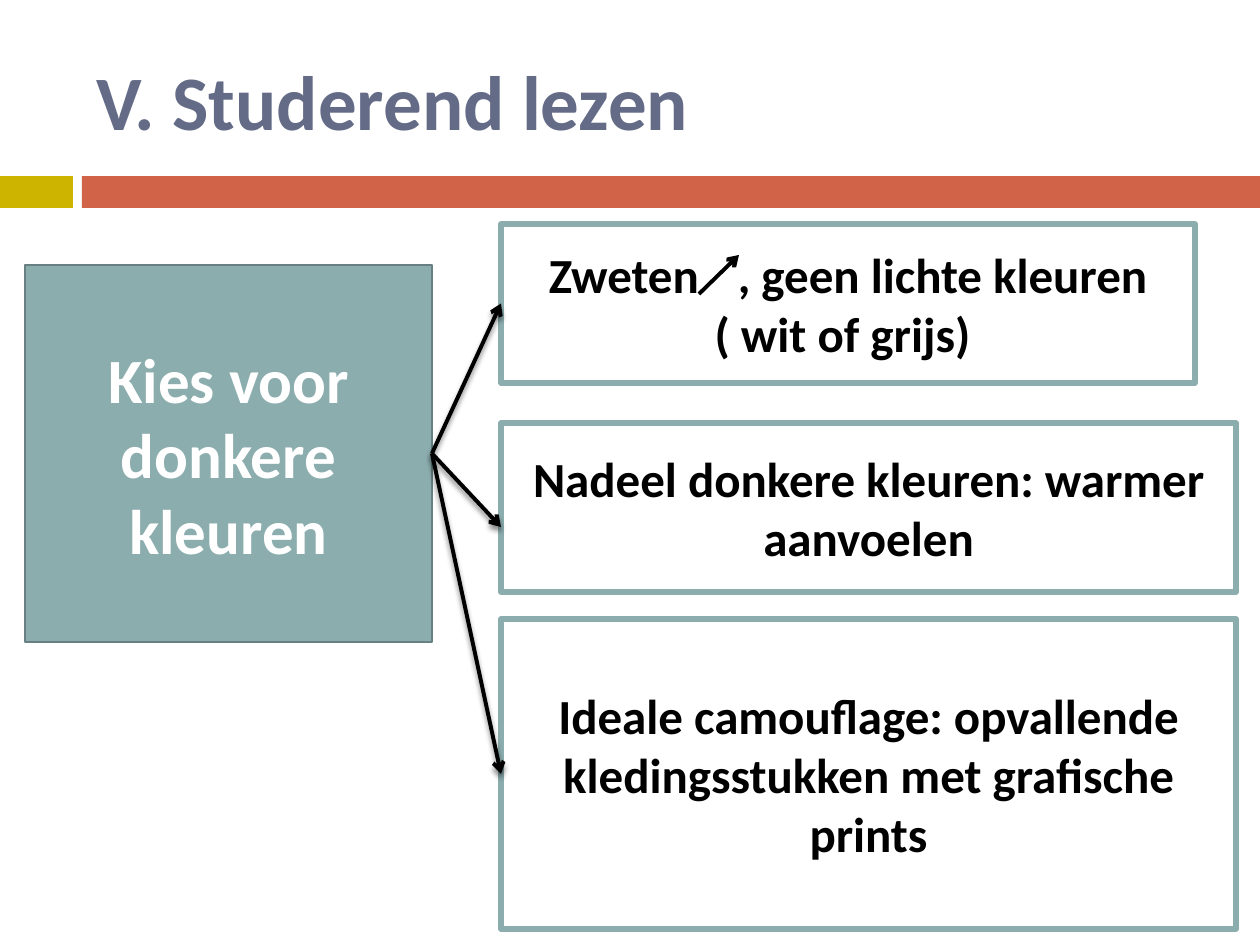
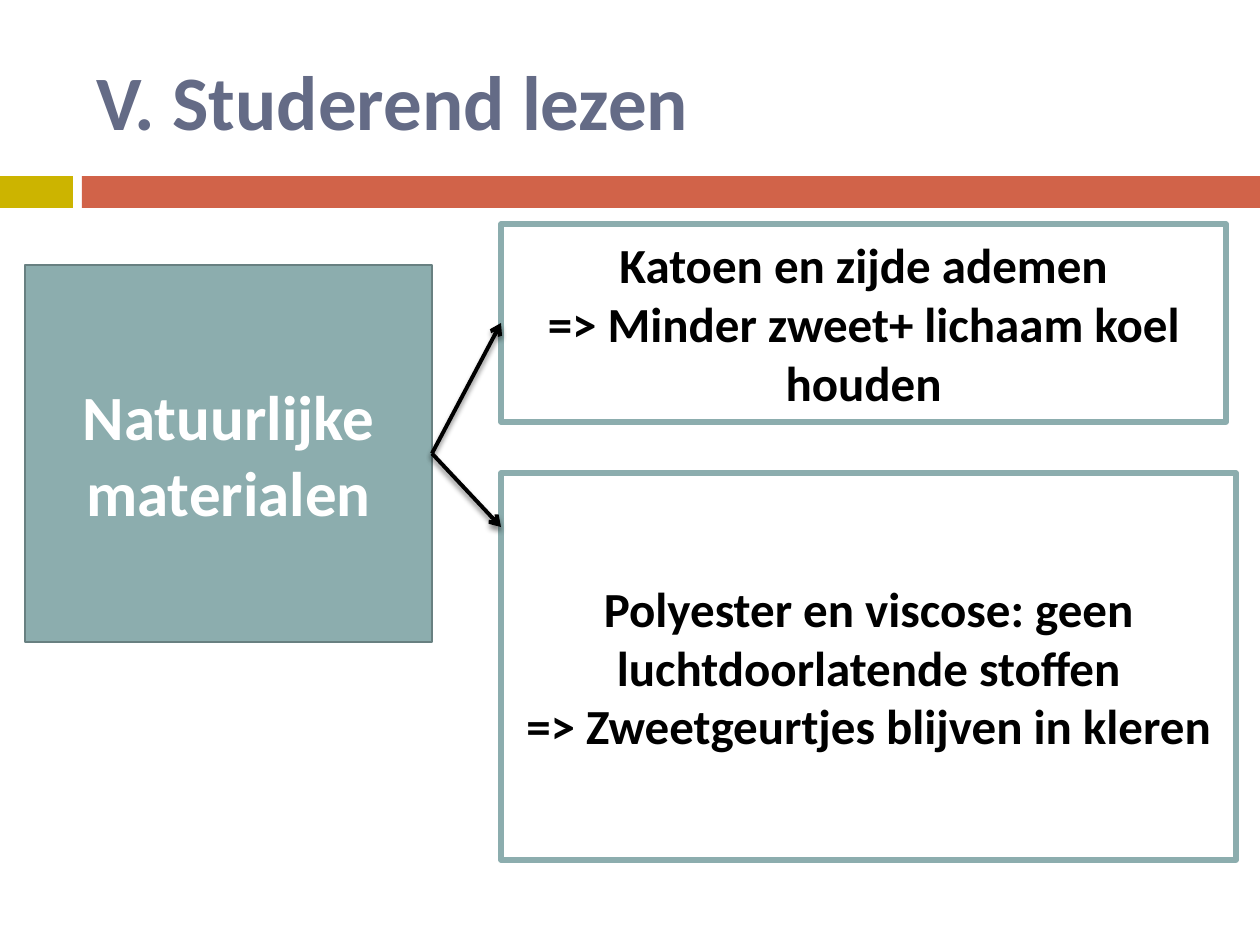
from dataclasses import dataclass

from lxml.etree import SubElement
from pptx import Presentation
from pptx.dml.color import RGBColor
from pptx.enum.shapes import MSO_CONNECTOR as Connector, MSO_SHAPE as Shape
from pptx.enum.text import MSO_ANCHOR as Anchor, PP_ALIGN as Align
from pptx.oxml.ns import qn
from pptx.util import Pt

HEADING = "V. Studerend lezen"

SLIDES = [
    {
        "topic": "Kies voor donkere kleuren",
        "points": [
            {"box": (224, 694, 159), "lines": ["Zweten\t, geen lichte kleuren ( wit of grijs) "]},
            {"box": (423, 735, 169), "lines": ["Nadeel donkere kleuren: warmer aanvoelen"],
             "arrow_y": 527},
            {"box": (619, 735, 310),
             "lines": ["Ideale camouflage: opvallende kledingsstukken met grafische prints"]},
        ],
        "rise": ((699, 294), (739, 255)),
    },
    {
        "topic": "Natuurlijke materialen",
        "points": [
            {"box": (224, 725, 198),
             "lines": ["Katoen en zijde ademen", "=> Minder zweet+ lichaam koel houden"]},
            {"box": (473, 735, 387),
             "lines": ["Polyester en viscose: geen luchtdoorlatende stoffen",
                       "=> Zweetgeurtjes blijven in kleren"],
             "arrow_y": 527},
        ],
    },
]


@dataclass(frozen=True)
class Theme:
    font: str = "Calibri"
    heading: str = "646B86"
    accent: str = "CCB400"
    band: str = "D16349"
    topic: str = "8CADAE"
    topic_edge: str = "688081"
    ink: str = "000000"
    paper: str = "FFFFFF"
    heading_size: int = 44
    topic_size: int = 36
    point_size: int = 28


THEME = Theme()
WIDTH, HEIGHT = 1260, 945
HEADING_BOX = (84, 32, 1124, 136)
BANDS = [((0, 176, 73, 32), THEME.accent), ((82, 176, WIDTH - 82, 32), THEME.band)]
TOPIC_BOX = (25, 265, 407, 377)
POINT_LEFT = 501
RIGHT_SIDE, LEFT_SIDE = 3, 1


def px(length):
    return round(length * 914400 / 126)


def rgb(code):
    return RGBColor.from_string(code)


def write(holder, lines, size, color, align=Align.CENTER):
    frame = holder.text_frame
    frame.word_wrap = True
    frame.vertical_anchor = Anchor.MIDDLE
    for index, line in enumerate(lines):
        paragraph = frame.add_paragraph() if index else frame.paragraphs[0]
        paragraph.alignment = align
        run = paragraph.add_run()
        run.text = line
        run.font.name = THEME.font
        run.font.size = Pt(size)
        run.font.bold = True
        run.font.color.rgb = rgb(color)


def add_box(slide, box, fill=None, edge=None, weight=0):
    rect = slide.shapes.add_shape(Shape.RECTANGLE, *map(px, box))
    rect.shadow.inherit = False
    if fill:
        rect.fill.solid()
        rect.fill.fore_color.rgb = rgb(fill)
    else:
        rect.fill.background()
    if edge:
        rect.line.color.rgb = rgb(edge)
        rect.line.width = Pt(weight)
    else:
        rect.line.fill.background()
    return rect


def add_arrow(slide, start, end, shadow=True):
    arrow = slide.shapes.add_connector(Connector.STRAIGHT, *map(px, start + end))
    arrow.line.color.rgb = rgb(THEME.ink)
    arrow.line.width = Pt(2.25)
    SubElement(arrow.line._get_or_add_ln(), qn("a:tailEnd"), type="arrow")
    effects = SubElement(arrow._element.spPr, qn("a:effectLst"))
    if shadow:
        outer = SubElement(effects, qn("a:outerShdw"), blurRad=str(Pt(3)),
                           dist=str(Pt(2.4)), dir="5400000", rotWithShape="0")
        shade = SubElement(outer, qn("a:srgbClr"), val=THEME.ink)
        SubElement(shade, qn("a:alpha"), val="45000")
    return arrow


def add_frame(slide):
    for box, color in BANDS:
        add_box(slide, box, fill=color)
    heading = slide.shapes.add_textbox(*map(px, HEADING_BOX))
    write(heading, [HEADING], THEME.heading_size, THEME.heading, Align.LEFT)


def add_scheme(slide, content):
    topic = add_box(slide, TOPIC_BOX, THEME.topic, THEME.topic_edge, 1.5)
    write(topic, [content["topic"]], THEME.topic_size, THEME.paper)
    left, top, width, height = TOPIC_BOX
    origin = (left + width, top + height / 2)
    for entry in content["points"]:
        top, width, height = entry["box"]
        point = add_box(slide, (POINT_LEFT, top, width, height), edge=THEME.topic, weight=3)
        write(point, entry["lines"], THEME.point_size, THEME.ink)
        target_y = entry.get("arrow_y", top + height / 2)
        arrow = add_arrow(slide, origin, (POINT_LEFT, target_y))
        arrow.begin_connect(topic, RIGHT_SIDE)
        if "arrow_y" not in entry:
            arrow.end_connect(point, LEFT_SIDE)
    if "rise" in content:
        add_arrow(slide, *content["rise"], shadow=False)


def main():
    deck = Presentation()
    deck.slide_width, deck.slide_height = px(WIDTH), px(HEIGHT)
    for content in SLIDES:
        slide = deck.slides.add_slide(deck.slide_layouts[6])
        add_frame(slide)
        add_scheme(slide, content)
    deck.save("out.pptx")


if __name__ == "__main__":
    main()
